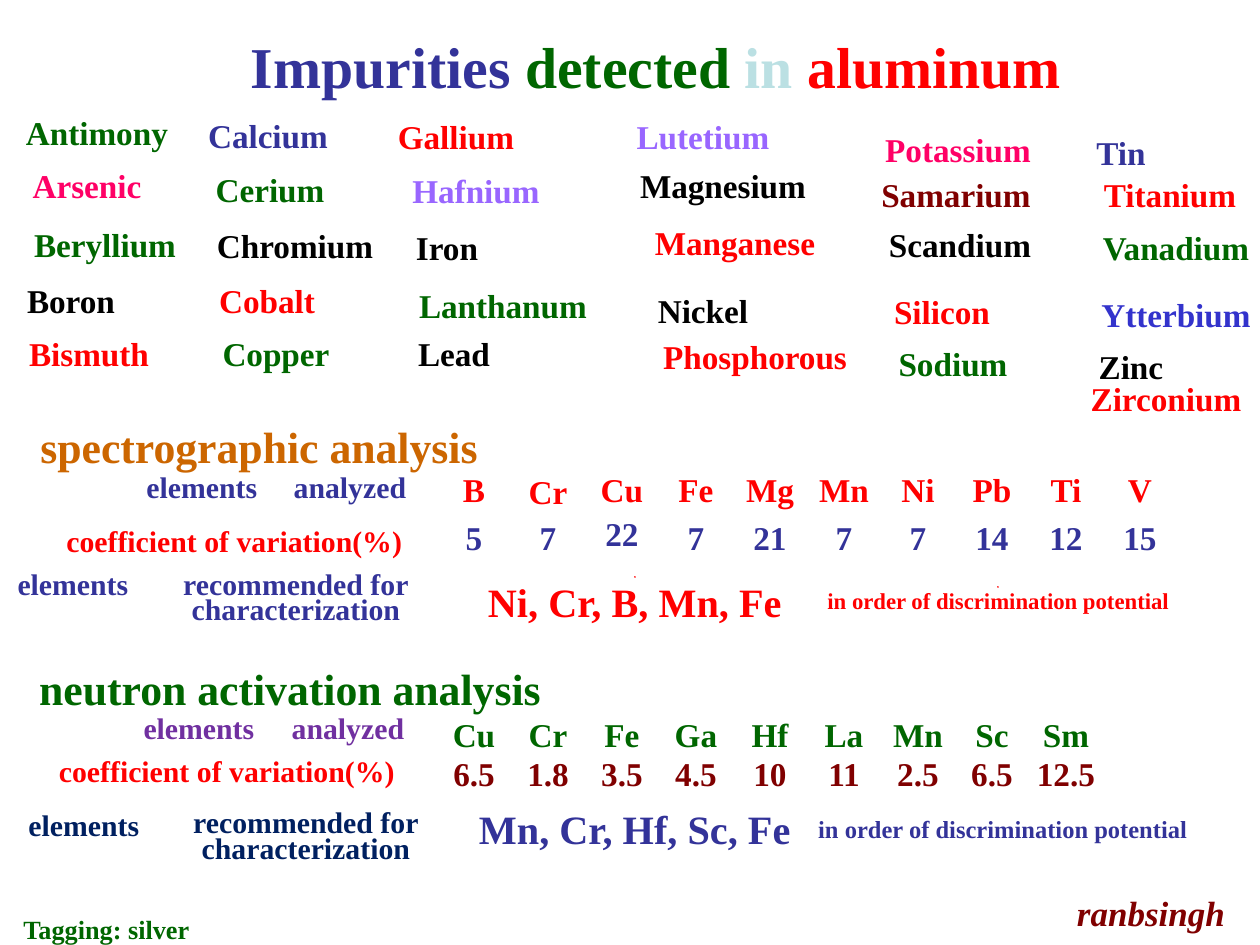
from dataclasses import dataclass

from pptx import Presentation
from pptx.dml.color import RGBColor
from pptx.enum.shapes import MSO_SHAPE as Shape
from pptx.enum.text import MSO_ANCHOR as Anchor, MSO_AUTO_SIZE as AutoSize, PP_ALIGN as Align
from pptx.util import Emu, Pt

PX = 914400 // 126
TITLE_ONLY = 5


@dataclass(frozen=True)
class Theme:
    font: str = "Times New Roman"
    navy: str = "333399"
    green: str = "006600"
    pale: str = "BBE0E3"
    red: str = "FF0000"
    pink: str = "FF0066"
    maroon: str = "800000"
    black: str = "000000"
    lilac: str = "9966FF"
    blue: str = "3333CC"
    orange: str = "CC6600"
    purple: str = "7030A0"
    ink: str = "002060"
    title: int = 33
    heading: int = 25
    ranking: int = 23
    signature: int = 20
    element: int = 19
    label: int = 17
    tag: int = 15
    note: int = 14
    small_note: int = 13


class Page:
    def __init__(self, deck, theme):
        self.theme = theme
        self.slide = deck.slides.add_slide(deck.slide_layouts[TITLE_ONLY])

    def fill_text(self, shape, parts, size, align=Align.CENTER, inset=(0, 0), italic=False):
        """Fill a shape with unwrapped (text, colour) runs."""
        frame = shape.text_frame
        frame.word_wrap = False
        frame.auto_size = AutoSize.NONE
        frame.vertical_anchor = Anchor.TOP
        frame.margin_left = frame.margin_right = inset[0] * PX
        frame.margin_top, frame.margin_bottom = inset[1] * PX, 0
        line = frame.paragraphs[0]
        line.alignment = align
        for text, color in parts:
            run = line.add_run()
            run.text = text
            run.font.name, run.font.size = self.theme.font, Pt(size)
            run.font.bold, run.font.italic = True, italic
            run.font.color.rgb = RGBColor.from_string(color)

    def title(self, x, y, parts):
        heading = self.slide.shapes.title
        heading.left, heading.top = Emu(x * PX), Emu(y * PX)
        heading.width = heading.height = Emu(0)
        self.fill_text(heading, parts, self.theme.title)

    def text(self, x, y, text, size, color, w=0, h=0, **style):
        """Text hung from a point, or from a box when w and h are given."""
        box = self.slide.shapes.add_textbox(x * PX, y * PX, w * PX, h * PX)
        self.fill_text(box, [(text, color)], size, **style)

    def outlined(self, x, y, text, size, color):
        point = self.slide.shapes.add_shape(Shape.RECTANGLE, x * PX, y * PX, 0, 0)
        point.shadow.inherit = False
        point.fill.background()
        point.line.color.rgb = RGBColor.from_string(color)
        point.line.width = Pt(0.75)
        self.fill_text(point, [(text, color)], size)

    def row(self, y, entries, color, left=474, step=74, shifts=None):
        """Evenly spaced entries; shifts moves single entries down."""
        for i, entry in enumerate(entries.split()):
            top = y + (shifts or {}).get(i, 0)
            self.text(left + i * step, top, entry, self.theme.element, color)

    def labels(self, entries, color):
        for x, y, text in entries:
            self.text(x, y, text, self.theme.label, color)


def main():
    t = Theme()
    deck = Presentation()
    deck.slide_width, deck.slide_height = Emu(1260 * PX), Emu(945 * PX)
    page = Page(deck, t)

    # Title
    page.title(656, 31, [("Impurities ", t.navy), ("detected ", t.green),
                         ("in ", t.pale), ("aluminum", t.red)])

    # Impurities, column by column
    impurities = [
        (97, 112, "Antimony", t.green), (87, 165, "Arsenic", t.pink),
        (105, 224, "Beryllium", t.green), (71, 280, "Boron", t.black),
        (89, 333, "Bismuth", t.red),
        (268, 115, "Calcium", t.navy), (270, 169, "Cerium", t.green),
        (295, 225, "Chromium", t.black), (267, 280, "Cobalt", t.red),
        (276, 333, "Copper", t.green),
        (456, 116, "Gallium", t.red), (476, 170, "Hafnium", t.lilac),
        (447, 227, "Iron", t.black), (503, 285, "Lanthanum", t.green),
        (454, 333, "Lead", t.black),
        (703, 116, "Lutetium", t.lilac), (723, 165, "Magnesium", t.black),
        (735, 222, "Manganese", t.red), (703, 290, "Nickel", t.black),
        (958, 129, "Potassium", t.pink), (956, 174, "Samarium", t.maroon),
        (960, 224, "Scandium", t.black), (942, 291, "Silicon", t.red),
        (953, 343, "Sodium", t.green),
        (1121, 132, "Tin", t.navy), (1170, 174, "Titanium", t.red),
        (1176, 227, "Vanadium", t.green), (1176, 294, "Ytterbium", t.blue),
        (1131, 346, "Zinc", t.black), (1166, 378, "Zirconium", t.red),
    ]
    for x, y, name, color in impurities:
        page.text(x, y, name, t.element, color)
    page.text(847, 336, "Phosphorous", t.element, t.red, align=Align.RIGHT)

    # Spectrographic analysis
    page.text(259, 420, "spectrographic analysis", t.heading, t.orange)
    page.labels([(202, 469, "elements"), (350, 469, "analyzed")], t.navy)
    page.row(469, "B Cr Cu Fe Mg Mn Ni Pb Ti V", t.red, shifts={1: 2})
    page.text(227, 510, "coefficient of variation(%)", t.label, t.red,
              w=15, h=14, inset=(0, 13))
    page.row(517, "5 7 22 7 21 7 7 14 12 15", t.navy, shifts={2: -4})
    page.labels([(73, 566, "elements"), (296, 566, "recommended for"),
                 (296, 591, "characterization")], t.navy)
    page.outlined(635, 577, "Ni, Cr, B, Mn, Fe", t.ranking, t.red)
    page.outlined(998, 587, "in order of discrimination potential", t.small_note, t.red)

    # Neutron activation analysis
    page.text(290, 662, "neutron activation analysis", t.heading, t.green)
    page.labels([(199, 710, "elements"), (348, 710, "analyzed")], t.purple)
    page.row(714, "Cu Cr Fe Ga Hf La Mn Sc Sm", t.green)
    page.labels([(227, 753, "coefficient of variation(%)")], t.red)
    page.row(753, "6.5 1.8 3.5 4.5 10 11 2.5 6.5 12.5", t.maroon)
    page.labels([(84, 807, "elements"), (306, 804, "recommended for"),
                 (306, 830, "characterization")], t.ink)
    page.text(635, 804, "Mn, Cr, Hf, Sc, Fe", t.ranking, t.navy)
    page.text(998, 804, "in order of discrimination potential", t.note, t.navy,
              w=10, h=15, inset=(0, 10))

    # Footer
    page.text(101, 903, "Tagging: silver", t.tag, t.green, w=11, h=43, inset=(0, 10))
    page.text(1065, 885, "ranbsingh", t.signature, t.maroon, w=175, h=55,
              align=Align.LEFT, inset=(12, 6), italic=True)

    deck.save("out.pptx")


if __name__ == "__main__":
    main()
